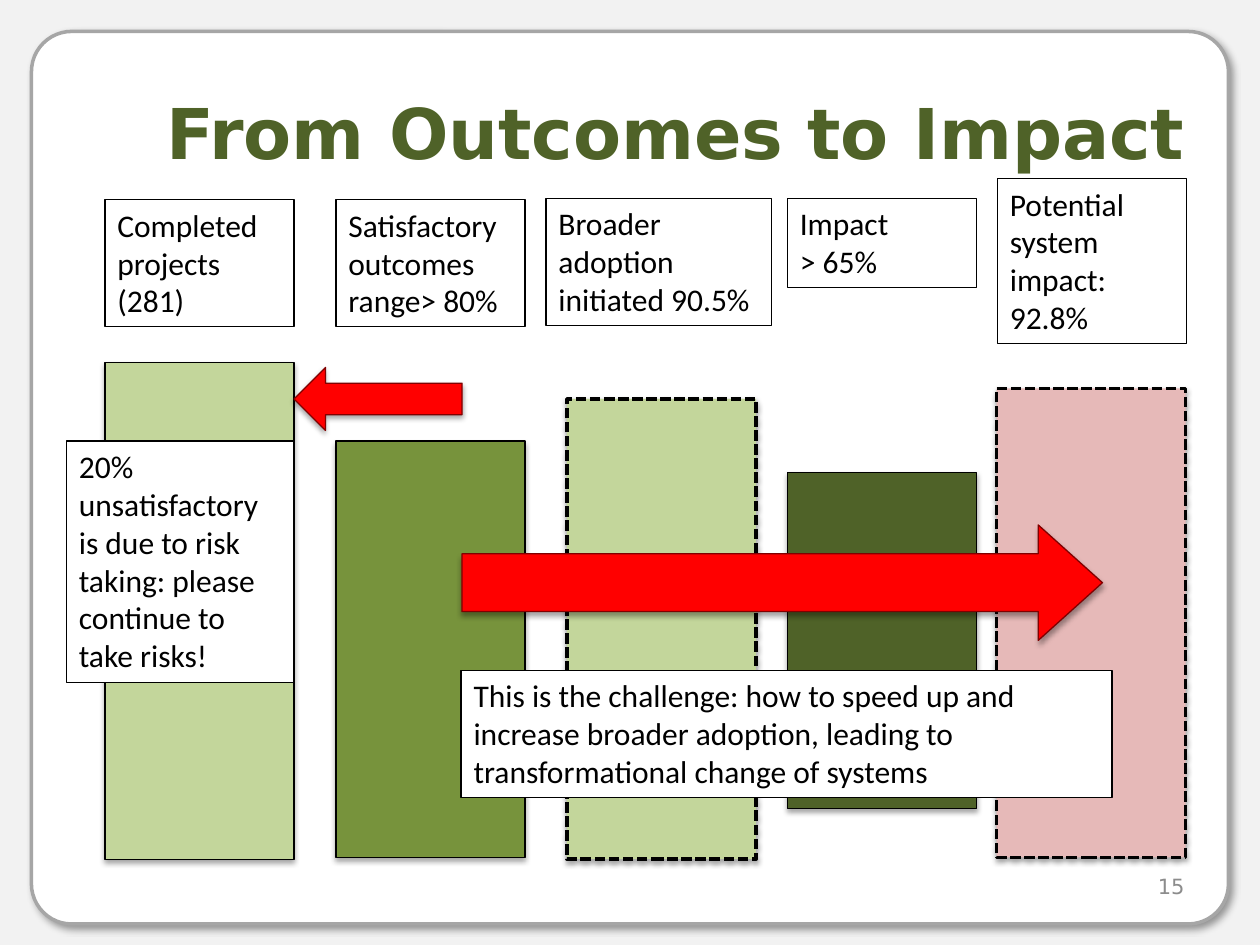
from lxml.etree import SubElement
from pptx import Presentation
from pptx.dml.color import RGBColor
from pptx.enum.dml import MSO_LINE
from pptx.enum.shapes import MSO_SHAPE
from pptx.enum.text import MSO_ANCHOR, PP_ALIGN
from pptx.oxml.ns import qn
from pptx.util import Pt

COLORS = {
    "background": "F2F2F2",
    "white": "FFFFFF",
    "black": "000000",
    "frame": "A6A6A6",
    "light green": "C3D69B",
    "green": "77933C",
    "dark green": "4F6228",
    "pink": "E6B9B8",
    "red": "FF0000",
    "dark red": "800000",
    "number": "8C8C8C",
}


def color(name):
    return RGBColor.from_string(COLORS[name])


class SlideBuilder:
    heading_font = "DejaVu Sans"
    body_font = "Calibri"

    def __init__(self, slide):
        self.slide = slide
        slide.background.fill.solid()
        slide.background.fill.fore_color.rgb = color("background")

    def format_text(self, paragraph, font_name, size, color_name, align, bold=False):
        paragraph.alignment = align
        font = paragraph.font
        font.name, font.size, font.bold = font_name, Pt(size), bold
        font.color.rgb = color(color_name)

    def shape(self, kind, box, fill, line="black", width=0.75, dashed=False):
        shape = self.slide.shapes.add_shape(kind, *map(Pt, box))
        shape.shadow.inherit = False
        if fill:
            shape.fill.solid()
            shape.fill.fore_color.rgb = color(fill)
        else:
            shape.fill.background()
        shape.line.color.rgb = color(line)
        shape.line.width = Pt(width)
        if dashed:
            shape.line.dash_style = MSO_LINE.SQUARE_DOT
        return shape

    def shadow(self, shape, blur=3.1, distance=1.8, angle=90, opacity=35):
        effects = shape._element.spPr.find(qn("a:effectLst"))
        outer = SubElement(
            effects, qn("a:outerShdw"), blurRad=str(Pt(blur)), dist=str(Pt(distance)),
            dir=str(angle * 60000), algn="ctr", rotWithShape="0",
        )
        tint = SubElement(outer, qn("a:srgbClr"), val=COLORS["black"])
        SubElement(tint, qn("a:alpha"), val=str(opacity * 1000))

    def title(self, text, box):
        title = self.slide.shapes.title
        title.left, title.top, title.width, title.height = map(Pt, box)
        title.text_frame.text = text
        title.text_frame.vertical_anchor = MSO_ANCHOR.MIDDLE
        self.format_text(title.text_frame.paragraphs[0], self.heading_font, 40,
                         "dark green", PP_ALIGN.RIGHT, bold=True)

    def panel(self, box):
        panel = self.shape(MSO_SHAPE.ROUNDED_RECTANGLE, box, "white", "frame", 2)
        panel.adjustments[0] = 0.045
        self.shadow(panel, 4, 3, 45, 40)
        self.slide.shapes.title._element.addprevious(panel._element)

    def bar(self, box, fill, dashed):
        width = 2 if dashed else 0.75
        self.shadow(self.shape(MSO_SHAPE.RECTANGLE, box, fill, width=width, dashed=dashed))

    def arrow(self, kind, box, head=0.5):
        arrow = self.shape(kind, box, "red", "dark red")
        arrow.adjustments[1] = head
        self.shadow(arrow)

    def label(self, text, box, fill=None):
        frame = self.shape(MSO_SHAPE.RECTANGLE, box, fill).text_frame
        frame.word_wrap = True
        frame.vertical_anchor = MSO_ANCHOR.TOP
        frame.text = text
        for paragraph in frame.paragraphs:
            self.format_text(paragraph, self.body_font, 18, "black", PP_ALIGN.LEFT)

    def page_number(self, text, box):
        frame = self.slide.shapes.add_textbox(*map(Pt, box)).text_frame
        frame.word_wrap = True
        frame.vertical_anchor = MSO_ANCHOR.MIDDLE
        frame.text = text
        self.format_text(frame.paragraphs[0], self.heading_font, 12, "number", PP_ALIGN.RIGHT)


def main():
    presentation = Presentation()
    presentation.slide_width, presentation.slide_height = Pt(720), Pt(540)
    builder = SlideBuilder(presentation.slides.add_slide(presentation.slide_layouts[5]))
    builder.title("From Outcomes to Impact", (36, 30, 648, 90))
    builder.panel((18, 18, 684, 510))

    bar_width = 108
    bars = [
        (60, 207, 491, "light green", False),
        (192, 252, 490, "green", False),
        (450, 270, 462, "dark green", False),
        (569.5, 222, 490, "pink", True),
        (324, 228, 491, "light green", True),
    ]
    for left, top, bottom, fill, dashed in bars:
        builder.bar((left, top, bar_width, bottom - top), fill, dashed)

    headings = [
        ("Completed projects (281)", (60, 114, bar_width, 72.7)),
        ("Satisfactory outcomes range> 80%", (192, 114, bar_width, 72.7)),
        ("Broader adoption initiated 90.5%", (312, 113.3, 129, 72.7)),
        ("Impact\n> 65%", (450, 113.3, bar_width, 50.9)),
        ("Potential system impact: 92.8%", (570, 102, bar_width, 94.5)),
    ]
    for text, box in headings:
        builder.label(text, box)

    builder.arrow(MSO_SHAPE.LEFT_ARROW, (168, 210, 96, 36))
    builder.label("20% unsatisfactory is due to risk taking: please continue to take risks!",
                  (38, 252, 130, 138), "white")
    builder.arrow(MSO_SHAPE.RIGHT_ARROW, (264, 300, 366, 66), 0.556)
    builder.label("This is the challenge: how to speed up and increase broader adoption, "
                  "leading to transformational change of systems",
                  (263.5, 383, 372, 72.7), "white")
    builder.page_number("15", (516, 492, 168, 28.8))
    presentation.save("out.pptx")


if __name__ == "__main__":
    main()
